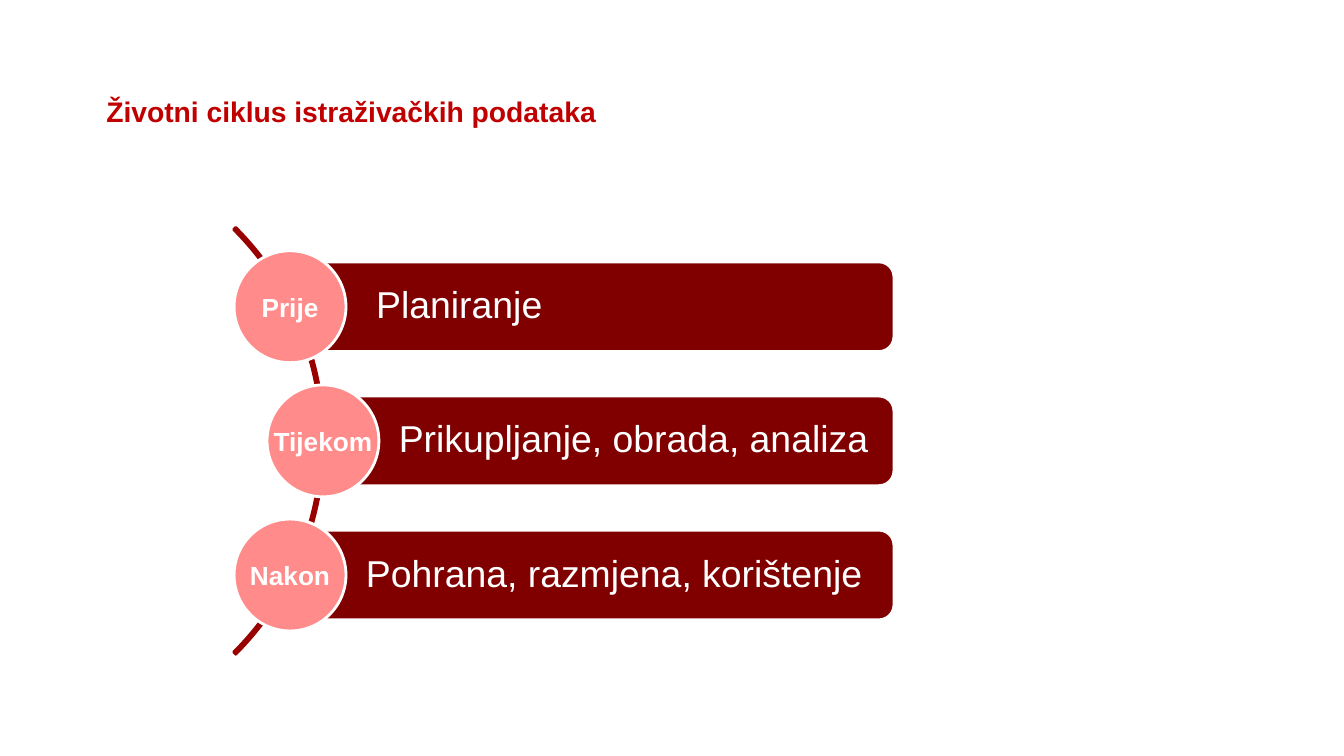
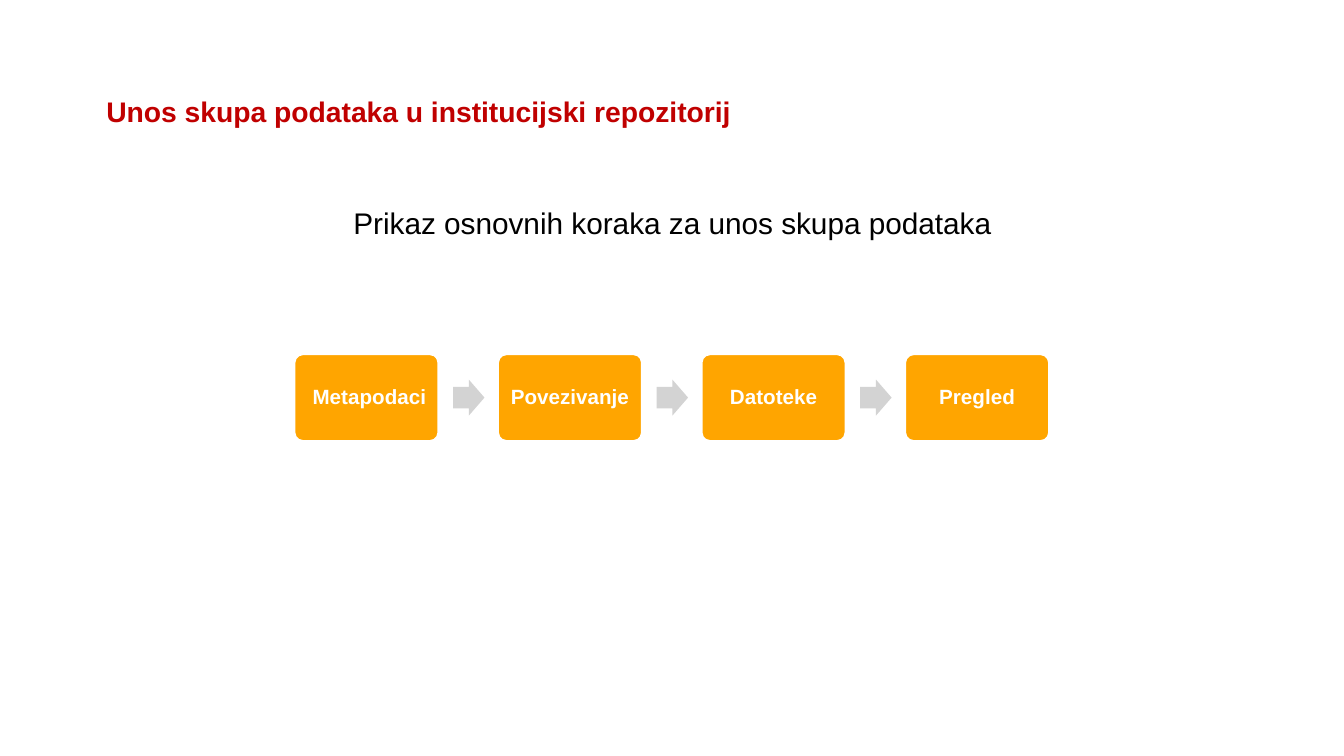
import pptx
import pptx.dml.color
import pptx.enum.shapes
import pptx.enum.text
import pptx.util

Cm = pptx.util.Cm
Pt = pptx.util.Pt
SHAPE = pptx.enum.shapes.MSO_SHAPE
ALIGN = pptx.enum.text.PP_ALIGN
ANCHOR = pptx.enum.text.MSO_ANCHOR

# Shared look
COLORS = {
    "title": "C00000", "text": "000000", "white": "FFFFFF", "bar": "800000",
    "arc": "990000", "circle": "FF8B8B", "step": "FFA500", "arrow": "D3D3D3",
}
FONT_NAME = "Arial"
FORMATS = {
    "title": {"size": Pt(20.2), "bold": True},
    "body": {"size": Pt(21.3), "bold": False},
    "bar": {"size": Pt(26.7), "bold": False},
    "circle": {"size": Pt(18.7), "bold": True},
    "step": {"size": Pt(14.7), "bold": True},
}
TEXT_LEFT, TEXT_WIDTH = 2.34, 29.21

# Slide 1: circle label, bar text, circle centre, left inset of the bar text
PHASES = [
    ("Prije", "Planiranje", 7.31, 2.06),
    ("Tijekom", "Prikupljanje, obrada, analiza", 8.14, 1.8),
    ("Nakon", "Pohrana, razmjena, korištenje", 7.31, 1.8),
]
PHASE_MIDDLE, PHASE_PITCH = 11.11, 3.38
BAR_RIGHT, BAR_HEIGHT = 22.53, 2.26
CIRCLE_SIZE, ARC_SIZE = 2.82, 15.21

# Slide 2: step label and its left inset
STEPS = [("Metapodaci", 0.3), ("Povezivanje", 0.15), ("Datoteke", 0.15), ("Pregled", 0.15)]
STEP_LEFT, STEP_MIDDLE, STEP_PITCH = 7.41, 10.02, 5.13
STEP_WIDTH, STEP_HEIGHT = 3.65, 2.21
ARROW_OFFSET, ARROW_WIDTH, ARROW_HEIGHT = 4.01, 0.79, 0.91


def rgb(name):
    return pptx.dml.color.RGBColor.from_string(COLORS[name])


def write(box, text, style, color, insets, align=ALIGN.LEFT,
          anchor=ANCHOR.MIDDLE, wrap=True, spacing=0.9):
    """Put one formatted paragraph into a shape or text box."""
    frame = box.text_frame
    left, top, right, bottom = (Cm(inset) for inset in insets)
    frame_format = {
        "margin_left": left, "margin_top": top, "margin_right": right,
        "margin_bottom": bottom, "vertical_anchor": anchor, "word_wrap": wrap,
    }
    for name, value in frame_format.items():
        setattr(frame, name, value)
    para = frame.paragraphs[0]
    para.alignment = align
    para.line_spacing = spacing
    span = para.add_run()
    span.text = text
    for name, value in {"name": FONT_NAME, **FORMATS[style]}.items():
        setattr(span.font, name, value)
    span.font.color.rgb = rgb(color)


def add_text(page, text, style, color, top, height, **options):
    box = page.shapes.add_textbox(Cm(TEXT_LEFT), Cm(top), Cm(TEXT_WIDTH), Cm(height))
    write(box, text, style, color, (0.34, 0.17, 0.34, 0.17), **options)


def add_figure(page, kind, left, top, width, height, fill, line=None, adjustments=()):
    """Draw a flat preset shape, outlined only when a line colour is given."""
    figure = page.shapes.add_shape(kind, Cm(left), Cm(top), Cm(width), Cm(height))
    figure.shadow.inherit = False
    figure.fill.solid()
    figure.fill.fore_color.rgb = rgb(fill)
    if line:
        figure.line.color.rgb = rgb(line)
        figure.line.width = Pt(2)
    else:
        figure.line.fill.background()
    for index, value in enumerate(adjustments):
        figure.adjustments[index] = value
    return figure


def add_page(deck, title):
    page = deck.slides.add_slide(deck.slide_layouts[6])
    add_text(page, title, "title", "title", 1.02, 3.68)
    return page


def add_phase(page, label, text, center, middle, inset):
    bar = add_figure(page, SHAPE.ROUNDED_RECTANGLE, center, middle - BAR_HEIGHT / 2,
                     BAR_RIGHT - center, BAR_HEIGHT, "bar", "white", [0.167])
    write(bar, text, "bar", "white", (inset, 0.18, 0.18, 0.18))
    radius = CIRCLE_SIZE / 2
    circle = add_figure(page, SHAPE.OVAL, center - radius, middle - radius,
                        CIRCLE_SIZE, CIRCLE_SIZE, "circle", "white")
    write(circle, label, "circle", "white", (0, 0, 0, 0),
          align=ALIGN.CENTER, wrap=False, spacing=1.0)


def add_step(page, label, left, inset):
    step = add_figure(page, SHAPE.ROUNDED_RECTANGLE, left, STEP_MIDDLE - STEP_HEIGHT / 2,
                      STEP_WIDTH, STEP_HEIGHT, "step", "white", [0.1])
    write(step, label, "step", "white", (inset, 0.15, 0.15, 0.15), align=ALIGN.CENTER)


def build_cycle(deck):
    page = add_page(deck, "Životni ciklus istraživačkih podataka")
    # Arc from 315 to 45 degrees behind the phases
    add_figure(page, SHAPE.BLOCK_ARC, -7.04, PHASE_MIDDLE - ARC_SIZE / 2,
               ARC_SIZE, ARC_SIZE, "bar", "arc", [189, 27, 0.005])
    for index, (label, text, center, inset) in enumerate(PHASES):
        middle = PHASE_MIDDLE + (index - 1) * PHASE_PITCH
        add_phase(page, label, text, center, middle, inset)


def build_steps(deck):
    page = add_page(deck, "Unos skupa podataka u institucijski repozitorij")
    add_text(page, "Prikaz osnovnih koraka za unos skupa podataka", "body", "text",
             5.08, 1.5, align=ALIGN.CENTER, anchor=ANCHOR.TOP)
    for index, (label, inset) in enumerate(STEPS):
        left = STEP_LEFT + index * STEP_PITCH
        add_step(page, label, left, inset)
        if index < len(STEPS) - 1:
            add_figure(page, SHAPE.RIGHT_ARROW, left + ARROW_OFFSET,
                       STEP_MIDDLE - ARROW_HEIGHT / 2, ARROW_WIDTH, ARROW_HEIGHT,
                       "arrow", adjustments=[0.6, 0.5])


def main():
    deck = pptx.Presentation()
    deck.slide_width, deck.slide_height = Cm(33.87), Cm(19.05)
    build_cycle(deck)
    build_steps(deck)
    deck.save("out.pptx")


if __name__ == "__main__":
    main()
